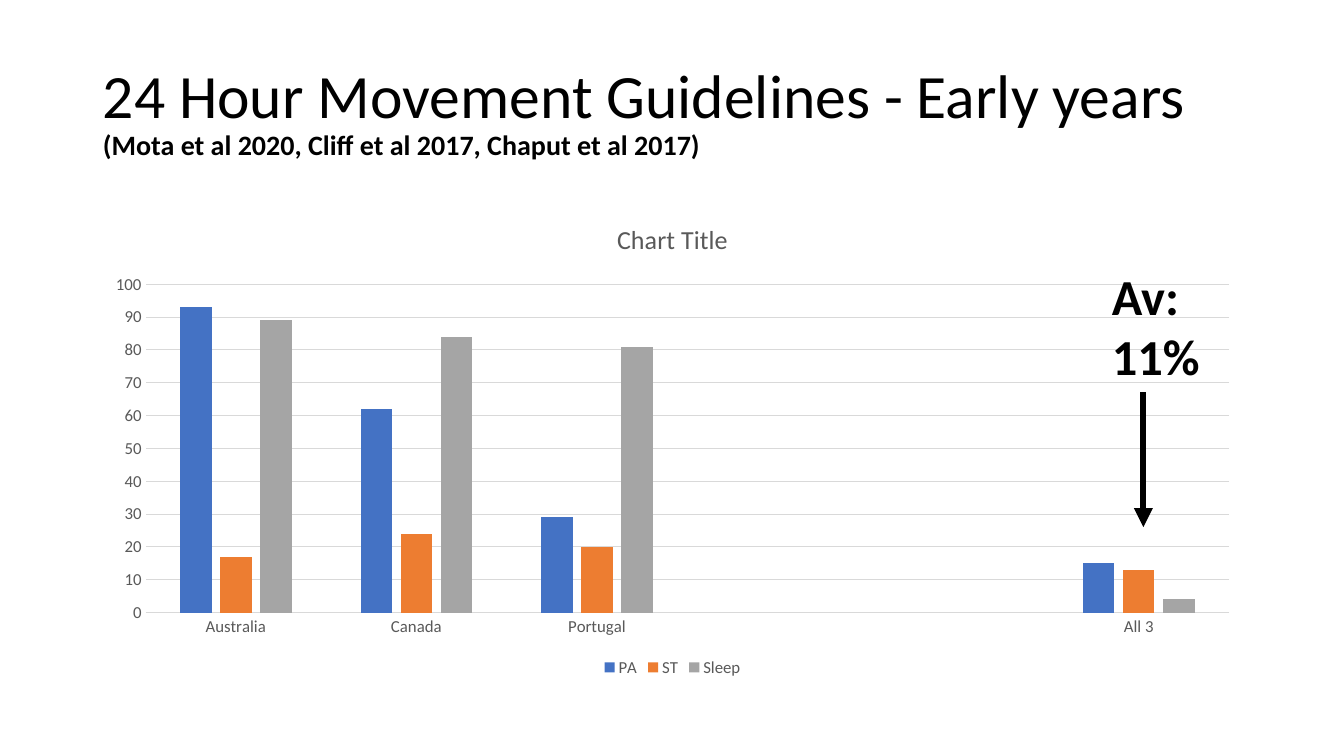
"""Build the slide on 24 hour movement guidelines in the early years."""
from lxml.etree import SubElement
from pptx import Presentation
from pptx.chart.data import CategoryChartData
from pptx.dml.color import RGBColor
from pptx.enum.chart import XL_CHART_TYPE, XL_LEGEND_POSITION, XL_TICK_MARK
from pptx.enum.shapes import MSO_CONNECTOR
from pptx.enum.text import MSO_ANCHOR, MSO_AUTO_SIZE, PP_ALIGN
from pptx.oxml.ns import qn
from pptx.util import Inches, Pt


def color(value):
    return RGBColor.from_string(value)


def set_font(font, size, value, bold=False):
    font.name = "Calibri"
    font.size = Pt(size)
    font.bold = bold
    font.color.rgb = color(value)


BLACK, GREY, PALE = "000000", "595959", "D9D9D9"

deck = Presentation()
deck.slide_width = Inches(13.33)
deck.slide_height = Inches(7.5)
page = deck.slides.add_slide(deck.slide_layouts[5])

title = page.shapes.title
title.left, title.top = Inches(0.92), Inches(0.4)
title.width, title.height = Inches(11.5), Inches(1.45)
title.text_frame.auto_size = MSO_AUTO_SIZE.NONE
title.text_frame.vertical_anchor = MSO_ANCHOR.MIDDLE
para = title.text_frame.paragraphs[0]
para.alignment = PP_ALIGN.LEFT
para.line_spacing = 0.9
set_font(para.font, 44, BLACK)
para.add_run().text = "24 Hour Movement Guidelines - Early years"
para.add_line_break()
citation = para.add_run()
citation.text = "(Mota et al 2020, Cliff et al 2017, Chaput et al 2017)"
citation.font.size = Pt(20)
citation.font.bold = True

series_rows = [
    ("PA", [93, 62, 29, None, None, 15], "4472C4"),
    ("ST", [17, 24, 20, None, None, 13], "ED7D31"),
    ("Sleep", [89, 84, 81, None, None, 4], "A5A5A5"),
]
data = CategoryChartData()
data.categories = ["Australia", "Canada", "Portugal", "", "", "All 3"]
for name, values, _ in series_rows:
    data.add_series(name, values)
chart = page.shapes.add_chart(
    XL_CHART_TYPE.COLUMN_CLUSTERED,
    Inches(0.92), Inches(2), Inches(11.5), Inches(4.76), data,
).chart
set_font(chart.font, 12, GREY)

chart.has_title = True
heading = chart.chart_title.text_frame.paragraphs[0]
heading.text = "Chart Title"
set_font(heading.font, 18.6, GREY)
chart.chart_title.include_in_layout = False

chart.has_legend = True
chart.legend.position = XL_LEGEND_POSITION.BOTTOM
chart.legend.include_in_layout = False
set_font(chart.legend.font, 12, GREY)

plot = chart.plots[0]
plot.gap_width = 219
plot.overlap = -27
plot.vary_by_categories = False
for series, (_, _, fill) in zip(plot.series, series_rows):
    series.format.fill.solid()
    series.format.fill.fore_color.rgb = color(fill)

for axis in (chart.category_axis, chart.value_axis):
    axis.major_tick_mark = XL_TICK_MARK.NONE
    axis.minor_tick_mark = XL_TICK_MARK.NONE
    set_font(axis.tick_labels.font, 12, GREY)
chart.value_axis.minimum_scale = 0
chart.value_axis.maximum_scale = 100
chart.value_axis.major_unit = 10
chart.value_axis.format.line.fill.background()
for line in (chart.category_axis.format.line, chart.value_axis.major_gridlines.format.line):
    line.color.rgb = color(PALE)
    line.width = Pt(0.75)

arrow = page.shapes.add_connector(
    MSO_CONNECTOR.STRAIGHT, Inches(11.34), Inches(3.89), Inches(11.34), Inches(5.23)
)
arrow.line.color.rgb = color(BLACK)
arrow.line.width = Pt(4.5)
SubElement(arrow.line._get_or_add_ln(), qn("a:tailEnd"), type="triangle")
SubElement(arrow._element.spPr, qn("a:effectLst"))

box = page.shapes.add_textbox(Inches(10.93), Inches(2.58), Inches(1.37), Inches(1.31))
box.text_frame.word_wrap = True
box.text_frame.auto_size = MSO_AUTO_SIZE.SHAPE_TO_FIT_TEXT
average = box.text_frame.paragraphs[0]
average.text = "Av: 11%"
set_font(average.font, 36, BLACK, bold=True)

deck.save("out.pptx")
